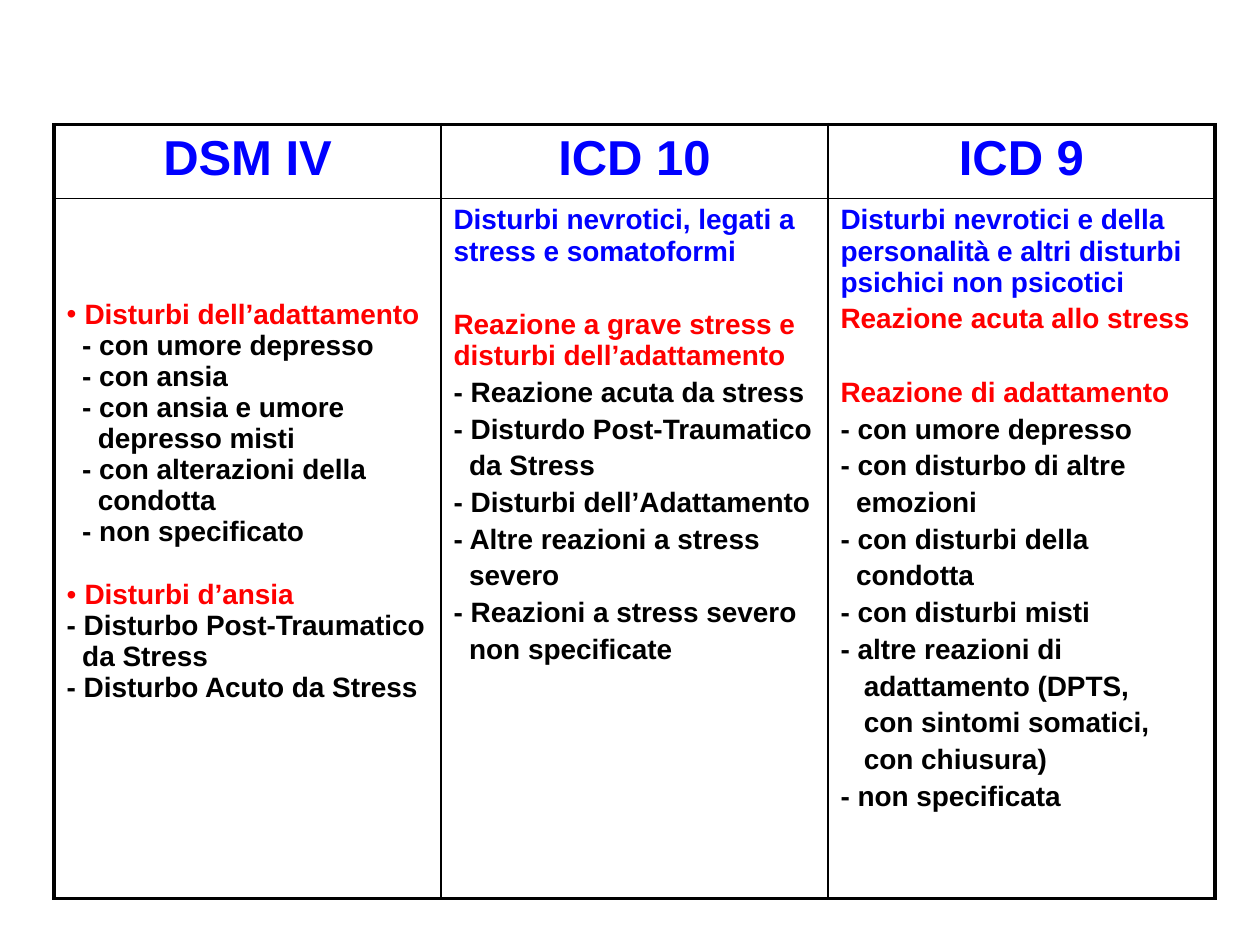
import pptx
import pptx.dml.color
import pptx.enum.text
import pptx.oxml
import pptx.oxml.ns
import pptx.util
from pptx.util import Cm

BLUE, RED, BLACK = "0000FF", "FF0000", "000000"
NAMESPACE = pptx.oxml.ns.nsdecls("a")
SPACE = 0.157  # width in cm of one space at 16 pt
LINE = 17.9  # height in points of one line at 16 pt


def write(paragraph, text, size, color, before=0, indent=0):
    """Fill a paragraph; a leading bullet sign becomes a real bullet."""
    paragraph.space_before = pptx.util.Pt(before)
    properties = paragraph._p.get_or_add_pPr()
    properties.set("marL", str(Cm(indent)))
    properties.set("indent", "0")
    if text.startswith("•"):
        text = text[1:].strip()
        properties.set("marL", str(Cm(0.36)))
        properties.set("indent", str(-Cm(0.36)))
        for xml in (f'<a:buClr {NAMESPACE}><a:srgbClr val="{color}"/></a:buClr>',
                    f'<a:buFont {NAMESPACE} typeface="Arial"/>',
                    f'<a:buChar {NAMESPACE} char="•"/>'):
            properties.append(pptx.oxml.parse_xml(xml))
    paragraph.text = text
    paragraph.font.name = "Arial"
    paragraph.font.size = pptx.util.Pt(size)
    paragraph.font.bold = True
    paragraph.font.color.rgb = pptx.dml.color.RGBColor.from_string(color)


def draw_borders(cell, widths):
    """Draw the left, right, top and bottom borders, widths in points."""
    properties = cell._tc.get_or_add_tcPr()
    for position, (side, width) in enumerate(zip("LRTB", widths)):
        properties.insert(position, pptx.oxml.parse_xml(
            f'<a:ln{side} {NAMESPACE} w="{pptx.util.Pt(width)}"><a:solidFill>'
            f'<a:srgbClr val="{BLACK}"/></a:solidFill></a:ln{side}>'))


# Each line: text, colour, indent in spaces, blank lines above
dsm_lines = [
    ("• Disturbi dell’adattamento", RED, 0, 0),
    ("- con umore depresso", BLACK, 2, 0),
    ("- con ansia", BLACK, 2, 0),
    ("- con ansia e umore", BLACK, 2, 0),
    ("depresso misti", BLACK, 4, 0),
    ("- con alterazioni della", BLACK, 2, 0),
    ("condotta", BLACK, 4, 0),
    ("- non specificato", BLACK, 2, 0),
    ("• Disturbi d’ansia", RED, 0, 1),
    ("- Disturbo Post-Traumatico", BLACK, 0, 0),
    ("da Stress", BLACK, 2, 0),
    ("- Disturbo Acuto da Stress", BLACK, 0, 0),
]
icd10_lines = [
    ("Disturbi nevrotici, legati a stress e somatoformi", BLUE, 0, 0),
    ("Reazione a grave stress e disturbi dell’adattamento", RED, 0, 1),
    ("- Reazione acuta da stress", BLACK, 0, 0),
    ("- Disturdo Post-Traumatico", BLACK, 0, 0),
    ("da Stress", BLACK, 2, 0),
    ("- Disturbi dell’Adattamento", BLACK, 0, 0),
    ("- Altre reazioni a stress", BLACK, 0, 0),
    ("severo", BLACK, 2, 0),
    ("- Reazioni a stress severo", BLACK, 0, 0),
    ("non specificate", BLACK, 2, 0),
]
icd9_lines = [
    ("Disturbi nevrotici e della personalità e altri disturbi psichici non psicotici", BLUE, 0, 0),
    ("Reazione acuta allo stress", RED, 0, 0),
    ("Reazione di adattamento", RED, 0, 1),
    ("- con umore depresso", BLACK, 0, 0),
    ("- con disturbo di altre", BLACK, 0, 0),
    ("emozioni", BLACK, 2, 0),
    ("- con disturbi della", BLACK, 0, 0),
    ("condotta", BLACK, 2, 0),
    ("- con disturbi misti", BLACK, 0, 0),
    ("- altre reazioni di", BLACK, 0, 0),
    ("adattamento (DPTS,", BLACK, 3, 0),
    ("con sintomi somatici,", BLACK, 3, 0),
    ("con chiusura)", BLACK, 3, 0),
    ("- non specificata", BLACK, 0, 0),
]
# Each column: heading, lines, space between paragraphs in points
columns = [
    ("DSM IV", dsm_lines, 0),
    ("ICD 10", icd10_lines, 3.2),
    ("ICD 9", icd9_lines, 3.2),
]

presentation = pptx.Presentation()
presentation.slide_width = Cm(25.4)
presentation.slide_height = Cm(19.05)
slide = presentation.slides.add_slide(presentation.slide_layouts[6])

table = slide.shapes.add_table(2, 3, Cm(1.09), Cm(2.51), Cm(23.4), Cm(15.6)).table
table.first_row = False
table.horz_banding = False
table.rows[0].height = Cm(1.49)
table.rows[1].height = Cm(14.11)

for column, (heading, lines, spacing) in enumerate(columns):
    table.columns[column].width = Cm(7.8)
    header, body = table.cell(0, column), table.cell(1, column)

    paragraph = header.text_frame.paragraphs[0]
    write(paragraph, heading, 28, BLUE)
    paragraph.alignment = pptx.enum.text.PP_ALIGN.CENTER

    for number, (text, color, spaces, blanks) in enumerate(lines):
        frame = body.text_frame
        paragraph = frame.add_paragraph() if number else frame.paragraphs[0]
        before = spacing + blanks * (LINE + spacing) if number else 0
        write(paragraph, text, 16, color, before, spaces * SPACE)

    left = 2.25 if column == 0 else 1
    right = 2.25 if column == 2 else 1
    draw_borders(header, (left, right, 2.25, 1))
    draw_borders(body, (left, right, 1, 2.25))
    for cell in (header, body):
        cell.fill.background()

# The first column starts three lines lower
table.cell(1, 0).margin_top = Cm(0.13) + pptx.util.Pt(3 * LINE)

presentation.save("out.pptx")
